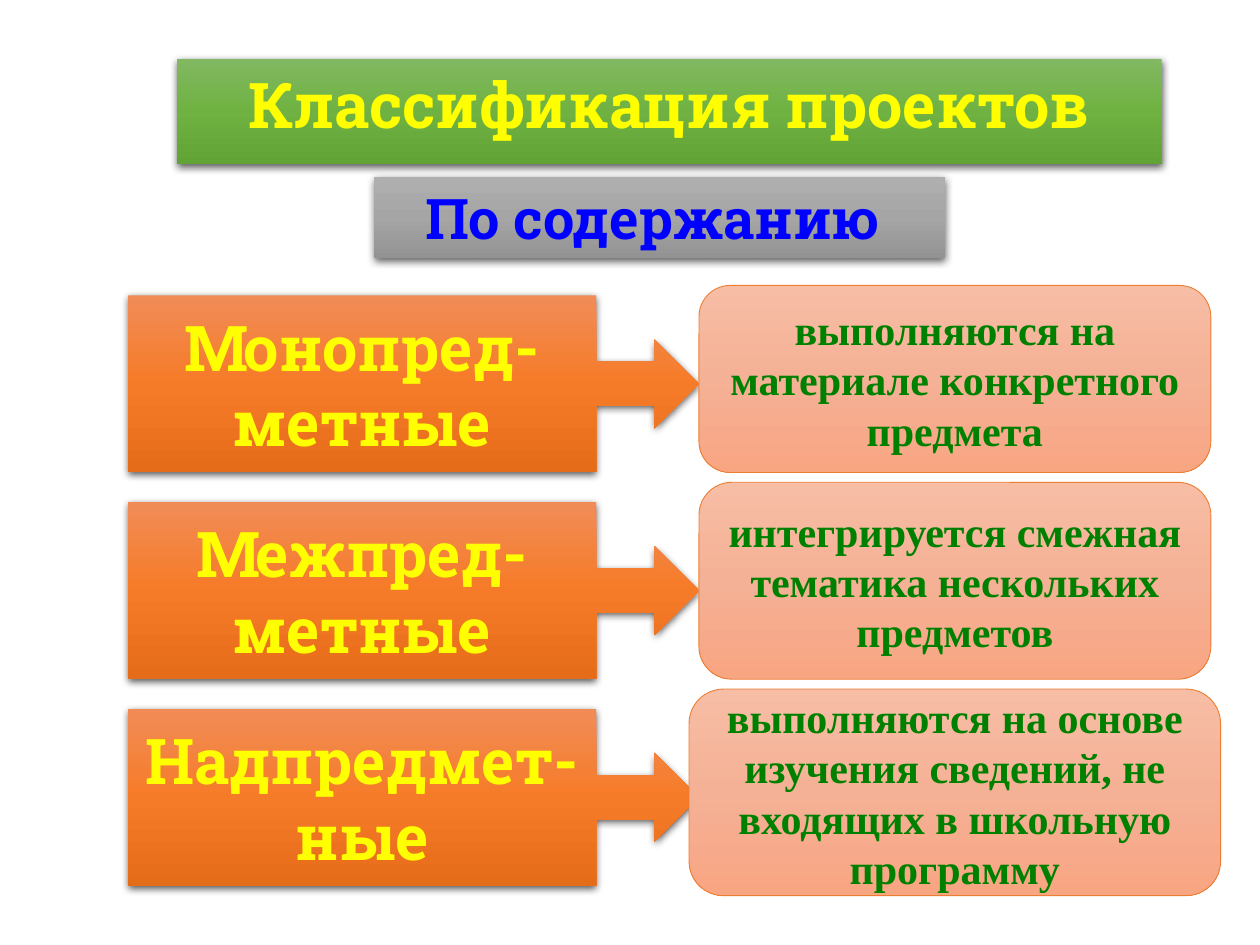
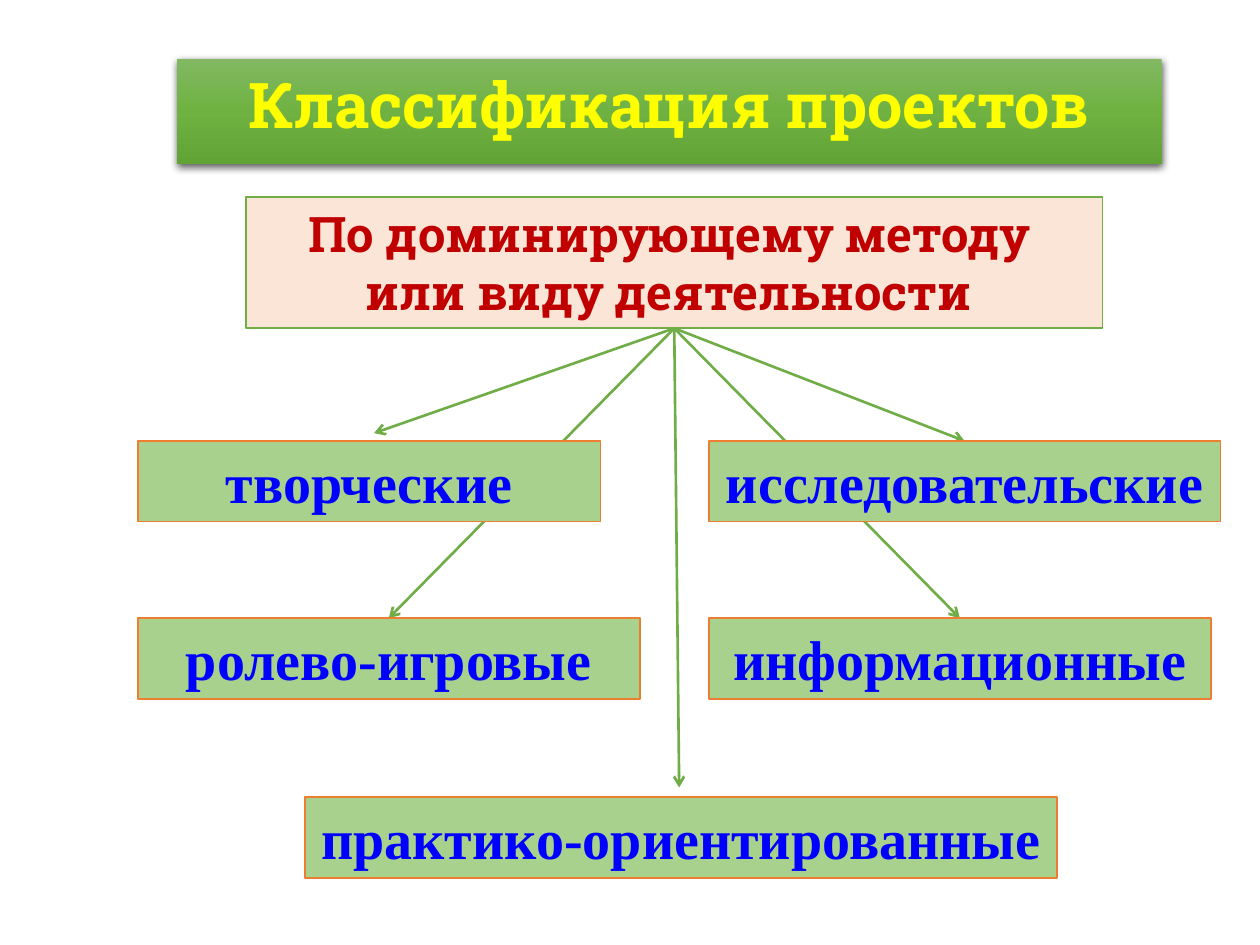
from copy import deepcopy

from pptx import Presentation
from pptx.dml.color import RGBColor
from pptx.enum.shapes import MSO_CONNECTOR, MSO_SHAPE
from pptx.enum.text import MSO_ANCHOR, MSO_AUTO_SIZE, PP_ALIGN
from pptx.oxml import parse_xml
from pptx.oxml.ns import nsdecls, qn
from pptx.util import Pt

RECT = MSO_SHAPE.RECTANGLE
ROUND_RECT = MSO_SHAPE.ROUNDED_RECTANGLE
CALLOUT = MSO_SHAPE.RIGHT_ARROW_CALLOUT
STRAIGHT = MSO_CONNECTOR.STRAIGHT
TOP, MIDDLE = MSO_ANCHOR.TOP, MSO_ANCHOR.MIDDLE
CENTER = PP_ALIGN.CENTER
GROW, FIXED = MSO_AUTO_SIZE.SHAPE_TO_FIT_TEXT, MSO_AUTO_SIZE.NONE

SLAB, SERIF = "Roboto Slab", "Times New Roman"
TITLE = "Классификация проектов"
TITLE_BOX = (101.25, 33.75, 562.5, 50.6)

COLORS = {
    "title": ["81B861", "6FB242", "62A336"],
    "subtitle": ["AFAFAF", "A5A5A5", "939393"],
    "kind": ["F18C57", "F67B28", "E56C19"],
    "card": ["F7BDA5", "F5B196", "F8A582"],
    "header": "FBE5D6",
    "method": "A9D18E",
    "green": "70AD47",
    "orange": "ED7D31",
    "yellow": "FFFF00",
    "blue": "0000FF",
    "dark green": "008000",
    "red": "C00000",
    "lime edge": "92D050",
    "gold edge": "FFC000",
}


def style(sp, fill, line=None, width=1, shadow=False):
    """Set a flat or three-stop vertical fill, the outline and the shadow."""
    color = COLORS[fill]
    if isinstance(color, list):
        sp.fill.gradient()
        sp.fill.gradient_angle = 270
        stops = sp.element.spPr.find(qn("a:gradFill")).find(qn("a:gsLst"))
        stops.append(deepcopy(stops[0]))
        for i, stop in enumerate(sp.fill.gradient_stops):
            stop.position = i / 2
            stop.color.rgb = RGBColor.from_string(color[i])
    else:
        sp.fill.solid()
        sp.fill.fore_color.rgb = RGBColor.from_string(color)
    if line:
        sp.line.color.rgb = RGBColor.from_string(COLORS[line])
        sp.line.width = Pt(width)
    else:
        sp.line.fill.background()
    sp.shadow.inherit = False
    if shadow:
        sp.element.spPr.find(qn("a:effectLst")).append(parse_xml(
            f'<a:outerShdw {nsdecls("a")} blurRad="{Pt(4.5)}" dist="{Pt(1.5)}" dir="5400000" '
            'algn="ctr" rotWithShape="0"><a:srgbClr val="000000"><a:alpha val="63000"/>'
            '</a:srgbClr></a:outerShdw>'))


def write(sp, lines, size, font, color, edge=None, anchor=TOP, wrap=True):
    """Write centred bold paragraphs; top-anchored boxes grow with their text."""
    tf = sp.text_frame
    tf.word_wrap = wrap
    tf.vertical_anchor = anchor
    tf.auto_size = GROW if anchor == TOP else FIXED
    for i, line in enumerate(lines):
        p = tf.add_paragraph() if i else tf.paragraphs[0]
        p.alignment = CENTER
        r = p.add_run()
        r.text = line
        r.font.name, r.font.size, r.font.bold = font, Pt(size), True
        r.font.color.rgb = RGBColor.from_string(COLORS[color])
        if edge:
            r.font._element.insert(0, parse_xml(
                f'<a:ln {nsdecls("a")} w="{Pt(0.75)}"><a:solidFill>'
                f'<a:srgbClr val="{COLORS[edge]}"/></a:solidFill></a:ln>'))


prs = Presentation()
prs.slide_width, prs.slide_height = Pt(720), Pt(540)

# Both slides carry the same green title band
slides = []
for _ in range(2):
    s = prs.slides.add_slide(prs.slide_layouts[5])
    sp = s.shapes.title
    sp.left, sp.top, sp.width, sp.height = map(Pt, TITLE_BOX)
    style(sp, "title", shadow=True)
    write(sp, [TITLE], 36, SLAB, "yellow", "lime edge")
    slides.append(s)

# Slide 1: classification by content
s = slides[0]
sp = s.shapes.add_shape(RECT, Pt(213.75), Pt(101.25), Pt(326.25), Pt(46))
style(sp, "subtitle", shadow=True)
write(sp, ["По содержанию "], 32, SLAB, "blue")

# Arrow callouts at an even pitch
for i, kind in enumerate(["Монопред-метные", "Межпред-метные", "Надпредмет-ные"]):
    sp = s.shapes.add_shape(CALLOUT, Pt(73.2), Pt(168.75 + i * 118.1), Pt(326.25), Pt(101.25))
    for j, value in enumerate([0.25, 0.25, 0.25, 0.82]):
        sp.adjustments[j] = value
    style(sp, "kind", shadow=True)
    write(sp, [kind], 36, SLAB, "yellow", "gold edge", MIDDLE)

# Explanation cards
cards = [
    ("выполняются на материале конкретного предмета", 399.4, 163.1, 292.5, 106.9),
    ("интегрируется смежная тематика нескольких предметов", 399.4, 275.6, 292.5, 112.5),
    ("выполняются на основе изучения сведений, не входящих в школьную программу",
     393.75, 393.75, 303.75, 118.1),
]
for text, *box in cards:
    sp = s.shapes.add_shape(ROUND_RECT, *map(Pt, box))
    style(sp, "card", "orange", 0.5)
    write(sp, [text], 24, SERIF, "dark green", anchor=MIDDLE)

# Slide 2: classification by method
s = slides[1]
header = s.shapes.add_shape(RECT, Pt(140.6), Pt(112.5), Pt(489.4), Pt(75.1))
style(header, "header", "green")
write(header, ["По доминирующему методу ", "или виду деятельности "], 28, SLAB, "red")
for p in header.text_frame.paragraphs:
    pPr = p._p.get_or_add_pPr()
    pPr.set("marL", str(Pt(27)))
    pPr.set("indent", str(-Pt(27)))
    pPr.append(parse_xml(
        f'<a:tabLst {nsdecls("a")}><a:tab pos="{Pt(18)}" algn="l"/></a:tabLst>'))

# Methods: text, left, top, width, free arrow tip (None joins the top side), wrap
methods = [
    ("творческие", 78.75, 252, 264.4, (213.75, 247.5), True),
    ("исследовательские", 405, 252, 292.5, None, True),
    ("ролево-игровые", 78.75, 353.25, 286.9, None, True),
    ("информационные", 405, 353.25, 286.9, None, True),
    ("практико-ориентированные", 174.4, 455.6, 429.75, (388.1, 450), False),
]
for text, left, top, width, tip, wrap in methods:
    sp = s.shapes.add_shape(RECT, Pt(left), Pt(top), Pt(width), Pt(46))
    style(sp, "method", "orange")
    write(sp, [text], 32, SERIF, "blue", wrap=wrap)

    # Arrow from the header, kept behind all boxes
    x, y = tip or (left + width / 2, top)
    c = s.shapes.add_connector(STRAIGHT, Pt(385.3), Pt(187.6), Pt(x), Pt(y))
    c.begin_connect(header, 2)
    if tip is None:
        c.end_connect(sp, 0)
    c.line.color.rgb = RGBColor.from_string(COLORS["green"])
    c.line.width = Pt(1.5)
    c.line._get_or_add_ln().append(parse_xml(f'<a:tailEnd {nsdecls("a")} type="arrow"/>'))
    c.element.spPr.append(parse_xml(f'<a:effectLst {nsdecls("a")}/>'))
    header.element.addprevious(c.element)

prs.save("out.pptx")
